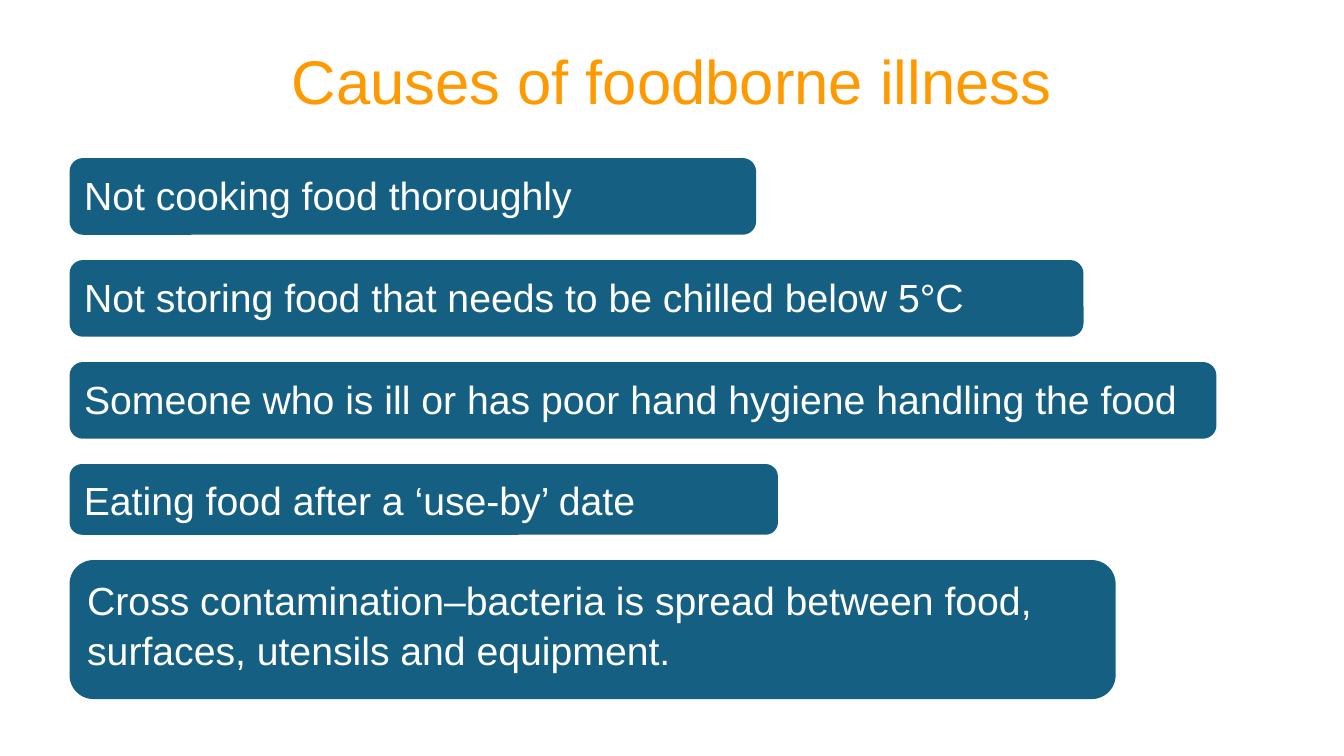
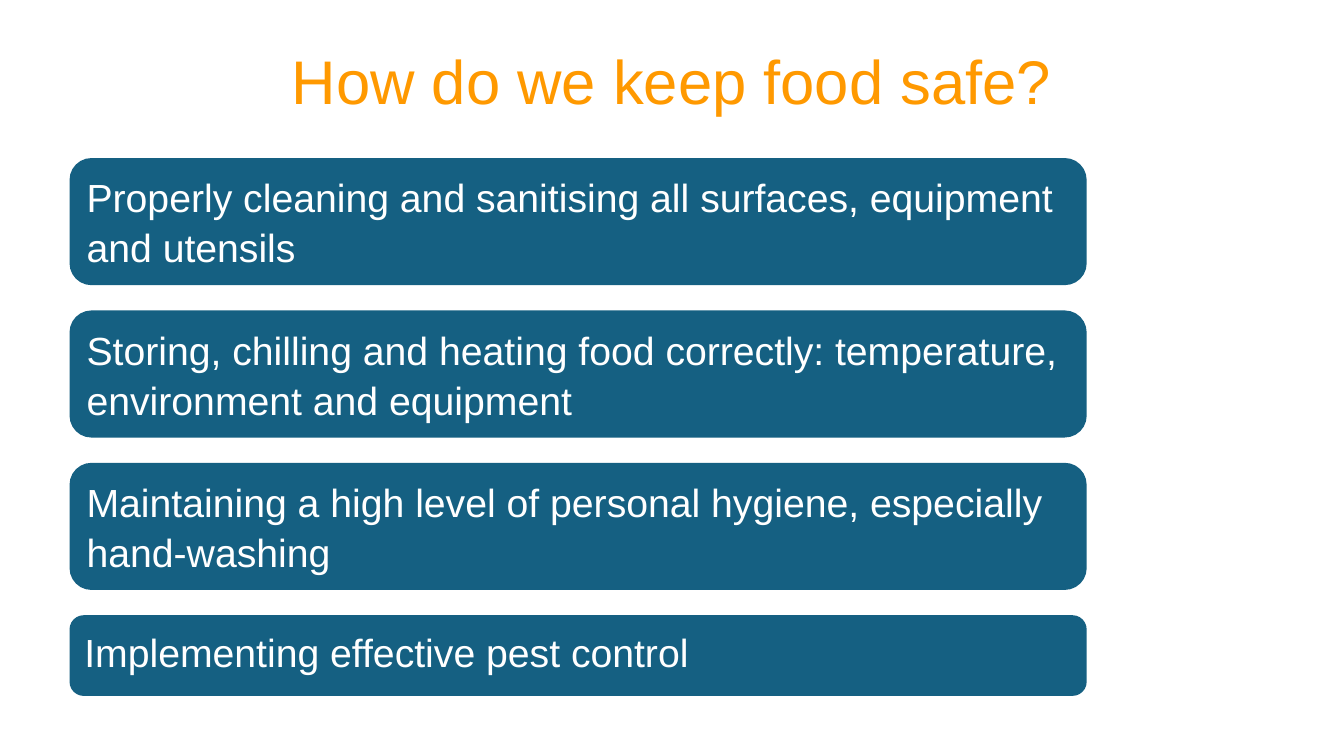
from pptx import Presentation
from pptx import util as u
from pptx.dml.color import RGBColor
from pptx.enum import shapes, text

COLOURS = {"title": "FF9900", "bar": "156082", "bar_text": "FFFFFF"}
FONT = "Arial"
TITLE_BOX = (2.33, 0.28, 29.21, 3.68)  # left, top, width, height in cm
BARS_AT = (1.78, 4.01)
BAR_GAP = 0.69

# Each bar: text, width and height in cm
SLIDES = [
    ("Causes of foodborne illness", [
        ("Not cooking food thoroughly", 17.25, 1.88),
        ("Not storing food that needs to be chilled below 5°C", 25.5, 1.88),
        ("Someone who is ill or has poor hand hygiene handling the food", 28.85, 1.88),
        ("Eating food after a ‘use-by’ date", 17.8, 1.73),
        ("Cross contamination–bacteria is spread between food, "
         "surfaces, utensils and equipment.", 26.31, 3.45),
    ]),
    ("How do we keep food safe?", [
        ("Properly cleaning and sanitising all surfaces, equipment and utensils",
         25.58, 3.15),
        ("Storing, chilling and heating food correctly: temperature, "
         "environment and equipment", 25.58, 3.15),
        ("Maintaining a high level of personal hygiene, especially hand-washing",
         25.58, 3.15),
        ("Implementing effective pest control", 25.58, 1.98),
    ]),
]


def rgb(name):
    return RGBColor.from_string(COLOURS[name])


def write(sp, content, *, size, colour, align, anchor, spacing):
    tf = sp.text_frame
    tf.word_wrap = True
    tf.vertical_anchor = anchor
    p = tf.paragraphs[0]
    p.alignment = align
    p.line_spacing = spacing
    r = p.add_run()
    r.text = content
    r.font.name = FONT
    r.font.size = u.Pt(size)
    r.font.color.rgb = rgb(colour)


def add_title(s, content, box):
    sp = s.shapes.add_textbox(*map(u.Cm, box))
    write(sp, content, size=44, colour="title", align=text.PP_ALIGN.CENTER,
          anchor=text.MSO_ANCHOR.MIDDLE, spacing=0.9)


def add_bar(s, content, box):
    sp = s.shapes.add_shape(shapes.MSO_SHAPE.ROUNDED_RECTANGLE, *map(u.Cm, box))
    sp.shadow.inherit = False
    sp.fill.solid()
    sp.fill.fore_color.rgb = rgb("bar")
    sp.line.color.rgb = rgb("bar")
    sp.line.width = u.Pt(1.5)
    write(sp, content, size=28, colour="bar_text", align=text.PP_ALIGN.LEFT,
          anchor=text.MSO_ANCHOR.TOP, spacing=1.07)


def add_bar_stack(s, bars, left, top):
    """Stack the bars downwards with equal gaps."""
    for content, width, height in bars:
        add_bar(s, content, (left, top, width, height))
        top += height + BAR_GAP


def main():
    prs = Presentation()
    prs.slide_width, prs.slide_height = u.Cm(33.87), u.Cm(19.05)
    for title, bars in SLIDES:
        s = prs.slides.add_slide(prs.slide_layouts[6])
        add_title(s, title, TITLE_BOX)
        add_bar_stack(s, bars, *BARS_AT)
    prs.save("out.pptx")


if __name__ == "__main__":
    main()
